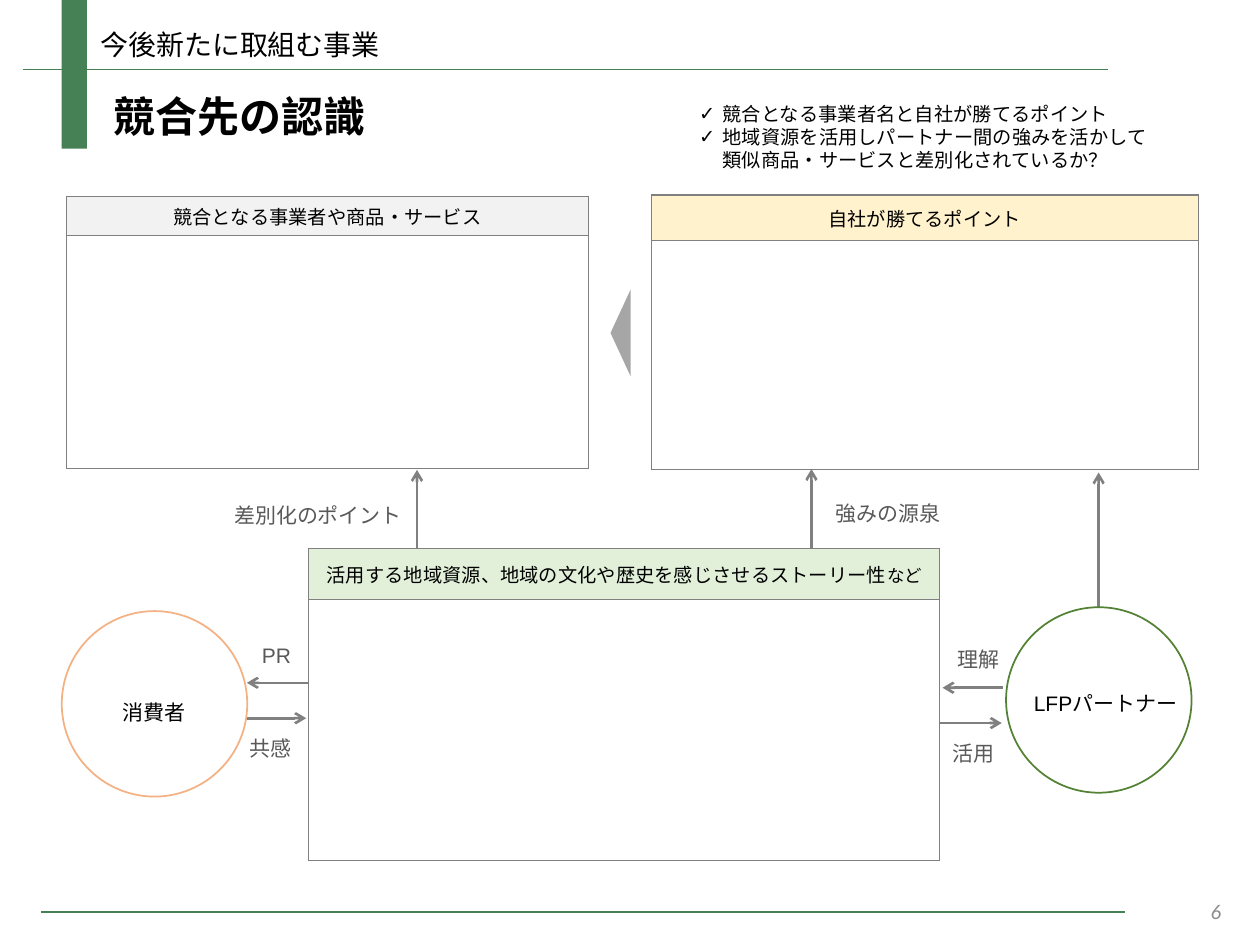
from typing import NamedTuple

from lxml import etree
from pptx import Presentation
from pptx.dml.color import RGBColor
from pptx.enum.shapes import MSO_CONNECTOR, MSO_SHAPE
from pptx.enum.text import MSO_ANCHOR, PP_ALIGN
from pptx.oxml import parse_xml
from pptx.oxml.ns import nsdecls, qn
from pptx.util import Pt

LEFT, CENTER, RIGHT = PP_ALIGN.LEFT, PP_ALIGN.CENTER, PP_ALIGN.RIGHT
TOP, MIDDLE = MSO_ANCHOR.TOP, MSO_ANCHOR.MIDDLE
RECTANGLE, OVAL = MSO_SHAPE.RECTANGLE, MSO_SHAPE.OVAL
TRIANGLE = MSO_SHAPE.ISOSCELES_TRIANGLE
STRAIGHT = MSO_CONNECTOR.STRAIGHT

COLORS = {
    "black": "000000",
    "label": "595959",
    "number": "8C8C8C",
    "brand": "458154",
    "border": "808080",
    "pointer": "A6A6A6",
    "competitor": "F2F2F2",
    "strength": "FFF2CC",
    "resource": "E2F0D9",
    "consumer": "F4B183",
    "partner": "548235",
}


class Label(NamedTuple):
    text: str
    left: float
    top: float
    width: float
    height: float = 21.8
    size: float = 12
    color: str = "label"
    align: PP_ALIGN = LEFT
    anchor: MSO_ANCHOR = TOP
    font: str = "Arial"
    bold: bool = False
    italic: bool = False
    spacing: float = 1.0
    bullet: str = ""


class Panel(NamedTuple):
    title: str
    fill: str
    left: float
    top: float
    width: float
    header: float
    body: float
    suffix: str = ""


class Line(NamedTuple):
    x1: float
    y1: float
    x2: float
    y2: float
    color: str = "border"
    weight: float = 1.5
    arrow: bool = True


class Circle(NamedTuple):
    left: float
    top: float
    color: str


CIRCLE_SIZE = 106
LABELS = [
    Label("6", 542.9, 506.2, 162, 28.8, color="number", align=RIGHT,
          anchor=MIDDLE, font="Calibri", italic=True),
    Label("今後新たに取組む事業", 50.4, 12.2, 270.7, 26.6, 16, "black"),
    Label("競合先の認識", 57.6, 48.2, 235.4, 36, 24, "black", bold=True),
    Label("競合となる事業者名と自社が勝てるポイント\n"
          "地域資源を活用しパートナー間の強みを活かして類似商品・サービスと差別化されているか？",
          392.4, 54.7, 273.6, 47.5, 11, "black", bullet="✓"),
    Label("強みの源泉", 470.2, 282.2, 80.6),
    Label("差別化のポイント", 126.7, 283.7, 113),
    Label("消費者", 31.7, 388.8, 113, 27.4, color="black", align=CENTER, spacing=1.5),
    Label("PR", 142.6, 363.6, 34.6),
    Label("共感", 135.4, 416.9, 39.6),
    Label("LFPパートナー", 575.3, 391, 113, color="black", align=CENTER),
    Label("理解", 540, 365.8, 39.6),
    Label("活用", 537.1, 419.8, 39.6),
]
PANELS = [
    Panel("競合となる事業者や商品・サービス", "competitor", 38.2, 112.5, 298.1, 22.3, 133.2),
    Panel("自社が勝てるポイント", "strength", 372.2, 111.4, 312.5, 25.9, 131),
    Panel("活用する地域資源、地域の文化や歴史を感じさせるストーリー性", "resource",
          176.4, 313.2, 360.7, 29.5, 149, suffix="など"),
]
LINES = [
    Line(13, 39.6, 632.9, 39.6, "brand", 0.75, False),
    Line(23.3, 521.2, 643, 521.2, "brand", 0.75, False),
    Line(463.7, 313.2, 463.7, 268),
    Line(238.3, 313.2, 238.3, 268.5),
    Line(176.4, 390.2, 141.1, 390.2),
    Line(140.4, 410.4, 175, 410.4),
    Line(627.8, 347, 627.8, 270),
    Line(573.1, 393, 538.6, 393),
    Line(537.1, 413.2, 572.4, 413.2),
]
CIRCLES = [Circle(35.3, 349.2, "consumer"), Circle(574.9, 347, "partner")]


def rgb(name: str) -> RGBColor:
    return RGBColor.from_string(COLORS[name])


def style_font(font, size: float, color: str, name: str = "Arial") -> None:
    font.size, font.name = Pt(size), name
    font.color.rgb = rgb(color)


def add_bullet(para, character: str) -> None:
    """Give the paragraph a hanging bullet."""
    properties = para._p.get_or_add_pPr()
    properties.set("marL", str(Pt(13.5)))
    properties.set("indent", str(-Pt(13.5)))
    etree.SubElement(properties, qn("a:buFont"), typeface="Arial")
    etree.SubElement(properties, qn("a:buChar"), char=character)


def add_label(page, label: Label) -> None:
    box = page.shapes.add_textbox(Pt(label.left), Pt(label.top), Pt(label.width), Pt(label.height))
    frame = box.text_frame
    frame.word_wrap = True
    frame.vertical_anchor = label.anchor
    frame.text = label.text
    for para in frame.paragraphs:
        para.alignment = label.align
        para.line_spacing = label.spacing
        if label.bullet:
            add_bullet(para, label.bullet)
        for span in para.runs:
            style_font(span.font, label.size, label.color, label.font)
            span.font.bold, span.font.italic = label.bold, label.italic


def add_borders(cell) -> None:
    properties = cell._tc.get_or_add_tcPr()
    for side in ("lnL", "lnR", "lnT", "lnB"):
        properties.append(parse_xml(
            f'<a:{side} {nsdecls("a")} w="{Pt(0.75)}"><a:solidFill>'
            f'<a:srgbClr val="{COLORS["border"]}"/></a:solidFill></a:{side}>'))


def add_panel(page, panel: Panel) -> None:
    """Draw a two-row table: a coloured heading over an empty field."""
    table = page.shapes.add_table(2, 1, Pt(panel.left), Pt(panel.top), Pt(panel.width),
                                  Pt(panel.header + panel.body)).table
    table.first_row = table.horz_banding = False
    for row, height in zip(table.rows, (panel.header, panel.body)):
        row.height = Pt(height)
        cell = row.cells[0]
        cell.margin_top = cell.margin_bottom = Pt(2)
        add_borders(cell)
    heading, field = table.cell(0, 0), table.cell(1, 0)
    field.fill.background()
    heading.fill.solid()
    heading.fill.fore_color.rgb = rgb(panel.fill)
    heading.vertical_anchor = MIDDLE
    para = heading.text_frame.paragraphs[0]
    para.text = panel.title
    para.alignment = CENTER
    style_font(para.runs[0].font, 11, "black")
    if panel.suffix:
        span = para.add_run()
        span.text = panel.suffix
        style_font(span.font, 10, "black")


def add_line(page, line: Line) -> None:
    connector = page.shapes.add_connector(STRAIGHT, Pt(line.x1), Pt(line.y1), Pt(line.x2), Pt(line.y2))
    connector.line.color.rgb = rgb(line.color)
    connector.line.width = Pt(line.weight)
    if line.arrow:
        etree.SubElement(connector.line._get_or_add_ln(), qn("a:tailEnd"), type="arrow")
    etree.SubElement(connector._element.spPr, qn("a:effectLst"))


def add_filled(page, kind, left: float, top: float, width: float, height: float, color: str):
    shape = page.shapes.add_shape(kind, Pt(left), Pt(top), Pt(width), Pt(height))
    shape.shadow.inherit = False
    shape.fill.solid()
    shape.fill.fore_color.rgb = rgb(color)
    shape.line.fill.background()
    return shape


def add_circle(page, circle: Circle) -> None:
    shape = page.shapes.add_shape(OVAL, Pt(circle.left), Pt(circle.top), Pt(CIRCLE_SIZE), Pt(CIRCLE_SIZE))
    shape.shadow.inherit = False
    shape.fill.background()
    shape.line.color.rgb = rgb(circle.color)
    shape.line.width = Pt(1)


def main() -> None:
    deck = Presentation()
    deck.slide_width, deck.slide_height = Pt(720), Pt(540)
    page = deck.slides.add_slide(deck.slide_layouts[6])
    add_filled(page, RECTANGLE, 35.3, 0, 14.4, 85, "brand")
    pointer = add_filled(page, TRIANGLE, 329.8, 184.5, 49.7, 11.5, "pointer")
    pointer.rotation = 270
    for draw, items in ((add_line, LINES), (add_panel, PANELS),
                        (add_circle, CIRCLES), (add_label, LABELS)):
        for item in items:
            draw(page, item)
    deck.save("out.pptx")


if __name__ == "__main__":
    main()
